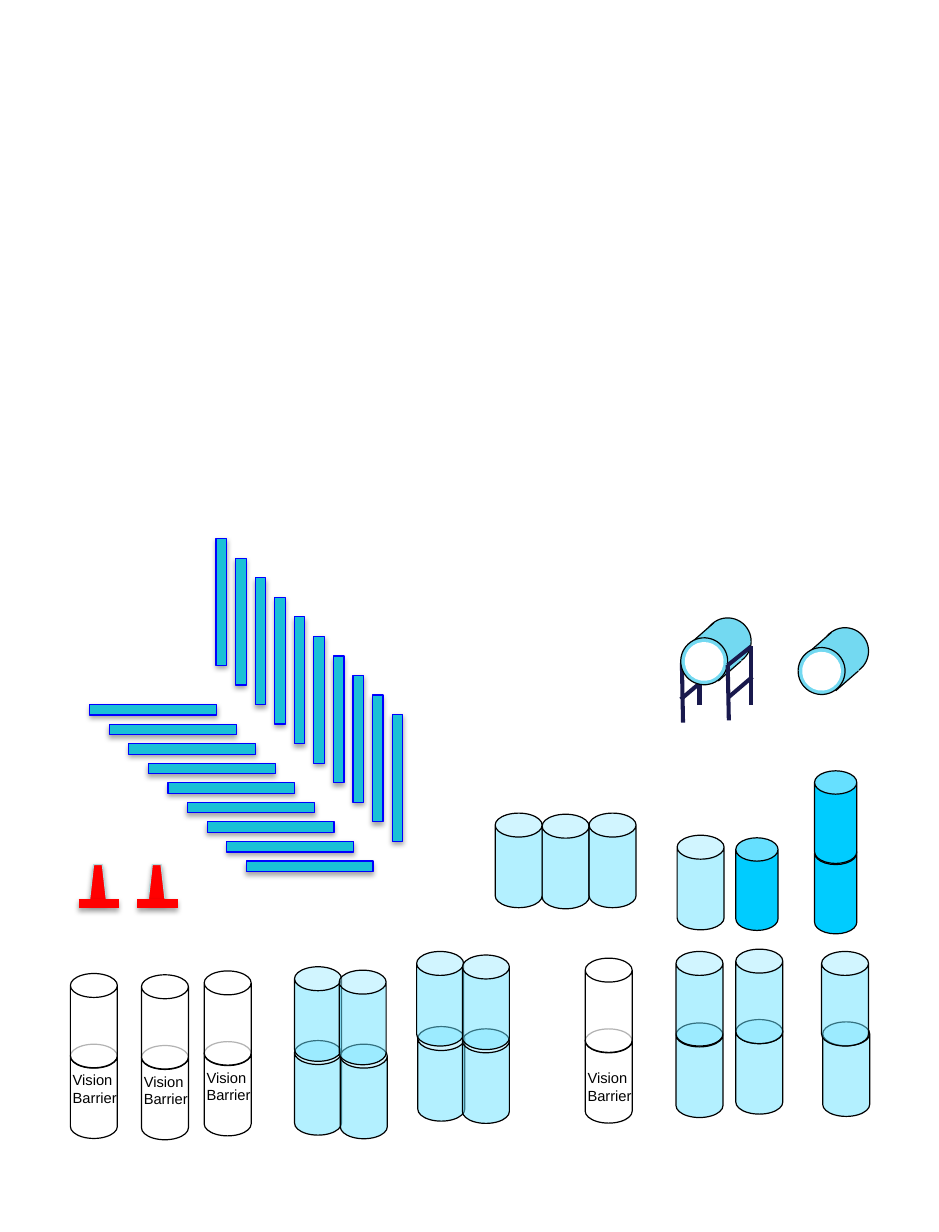
"""Build a slide of traffic barrels, tanks, cones and parking bars."""
from lxml.etree import SubElement
from pptx import Presentation
from pptx.dml.color import RGBColor
from pptx.enum.shapes import MSO_CONNECTOR as Conn, MSO_SHAPE as Kind
from pptx.enum.text import MSO_AUTO_SIZE as Fit
from pptx.oxml import parse_xml
from pptx.oxml.ns import qn
from pptx.util import Pt

BLACK = RGBColor(0x00, 0x00, 0x00)
WHITE = RGBColor(0xFF, 0xFF, 0xFF)
TEAL = RGBColor(0x1A, 0xC0, 0xD6)
BLUE = RGBColor(0x00, 0x00, 0xFF)
PALE = RGBColor(0x69, 0xE2, 0xFF)
CYAN = RGBColor(0x00, 0xCC, 0xFF)
SKY = RGBColor(0x73, 0xD9, 0xF1)
RED = RGBColor(0xFF, 0x00, 0x00)
MIST = RGBColor(0xB6, 0xDC, 0xDF)
NAVY = RGBColor(0x19, 0x19, 0x4D)

SHADE = (
    '<a:outerShdw xmlns:a="http://schemas.openxmlformats.org/drawingml/2006/main"'
    ' blurRad="39370" dist="22860" dir="5400000" rotWithShape="0">'
    '<a:srgbClr val="000000"><a:alpha val="35000"/></a:srgbClr></a:outerShdw>'
)

deck = Presentation()
deck.slide_width, deck.slide_height = Pt(576), Pt(756)
slide = deck.slides.add_slide(deck.slide_layouts[6])
shapes = slide.shapes


def draw(kind, x, y, w, h, fill, edge=BLACK, turn=0, alpha=100, shade=False):
    item = shapes.add_shape(kind, Pt(x), Pt(y), Pt(w), Pt(h))
    item.rotation = turn
    item.fill.solid()
    item.fill.fore_color.rgb = fill
    if alpha < 100:
        tint = item.fill._xPr.find(qn("a:solidFill"))[0]
        SubElement(tint, qn("a:alpha")).set("val", str(alpha * 1000))
    if edge is None:
        item.line.fill.background()
    else:
        item.line.color.rgb = edge
        item.line.width = Pt(0.75)
    item.shadow.inherit = False
    if shade:
        item._element.spPr.find(qn("a:effectLst")).append(parse_xml(SHADE))
    if kind == Kind.CAN:
        item.adjustments[0] = 0.509 if w > 26 else 0.554


def rule(x1, y1, x2, y2, color, width, shade=False):
    item = shapes.add_connector(Conn.STRAIGHT, Pt(x1), Pt(y1), Pt(x2), Pt(y2))
    item.line.color.rgb = color
    item.line.width = Pt(width)
    glow = SubElement(item._element.spPr, qn("a:effectLst"))
    if shade:
        glow.append(parse_xml(SHADE))


for x, y, turn, count in ((90.7, 396.7, 90, 9), (132.5, 330.5, 180, 10)):
    for i in range(count):
        draw(Kind.RECTANGLE, x + 12 * i, y + 12 * i, 6.5, 77.8, TEAL, BLUE, turn, shade=True)

pale_cans = (
    (451.4, 625.7), (451.4, 582.5), (504.7, 627.1), (504, 583.9),
    (415.4, 512.6), (414.7, 627.8), (414.7, 583.9),
    (332.6, 499.7), (303.8, 499), (361.4, 499),
    (256.3, 630), (283.7, 631.4), (255.6, 583.9), (283.7, 586.1),
    (180.7, 638.6), (208.8, 640.8), (180.7, 593.3), (208.1, 595.4),
)
for x, y in pale_cans:
    draw(Kind.CAN, x, y, 28.8, 58, PALE, alpha=50)

for x, y in ((451.4, 514.1), (499.7, 516.2), (499.7, 473)):
    draw(Kind.CAN, x, y, 25.9, 56.9, CYAN)

for x, y, drop in ((359, 631.4, 20.9), (43.2, 640.8, 13), (125.3, 639.2, 13), (86.8, 641.6, 13)):
    for top in (y, y - 43.4):
        draw(Kind.CAN, x, top, 28.8, 57.8, WHITE, alpha=70)
    box = shapes.add_textbox(Pt(x - 5.7), Pt(y + drop), Pt(41.8), Pt(28.8))
    frame = box.text_frame
    frame.word_wrap = False
    frame.auto_size = Fit.SHAPE_TO_FIT_TEXT
    frame.text = "Vision\nBarrier"
    for para in frame.paragraphs:
        para.font.size = Pt(9)
        para.font.name = "Arial"
        para.font.color.rgb = BLACK

for x in (90.7, 54.7):
    draw(Kind.TRAPEZOID, x, 530.6, 10.8, 23.8, RED, MIST, shade=True)
    rule(x - 6.4, 554.4, x + 18.3, 554.4, RED, 6, shade=True)

back = (
    (432, 416.9, 417.6, 429.1), (419, 443.5, 418.3, 406.8),
    (429.1, 432.7, 429.1, 396),
)
front = (
    (460.8, 432.7, 460.8, 396.7), (447.1, 442.1, 446.4, 408.2),
    (460.8, 396.7, 446.4, 408.2), (461.5, 415.4, 447.1, 427.7),
)
for x, y, rear, fore in ((504, 385.2, (), ()), (432, 379.2, back, front)):
    for leg in rear:
        rule(*leg, NAVY, 2.5)
    draw(Kind.OVAL, x, y, 28.8, 28.8, SKY, turn=10.1)
    draw(Kind.RECTANGLE, x - 2.9, y + 7.2, 18.7, 28.8, SKY, None, 317.9)
    rule(x - 7.9, y + 15.1, x + 6, y + 2.9, BLACK, 0.75)
    rule(x + 8.6, y + 38.7, x + 22.5, y + 26.6, BLACK, 0.75)
    draw(Kind.OVAL, x - 14.4, y + 12.2, 28.8, 28.8, SKY, turn=10.1)
    draw(Kind.OVAL, x - 11.9, y + 14.8, 23.8, 23.8, WHITE, None, 10.1)
    for leg in fore:
        rule(*leg, NAVY, 2.5)

deck.save("out.pptx")
